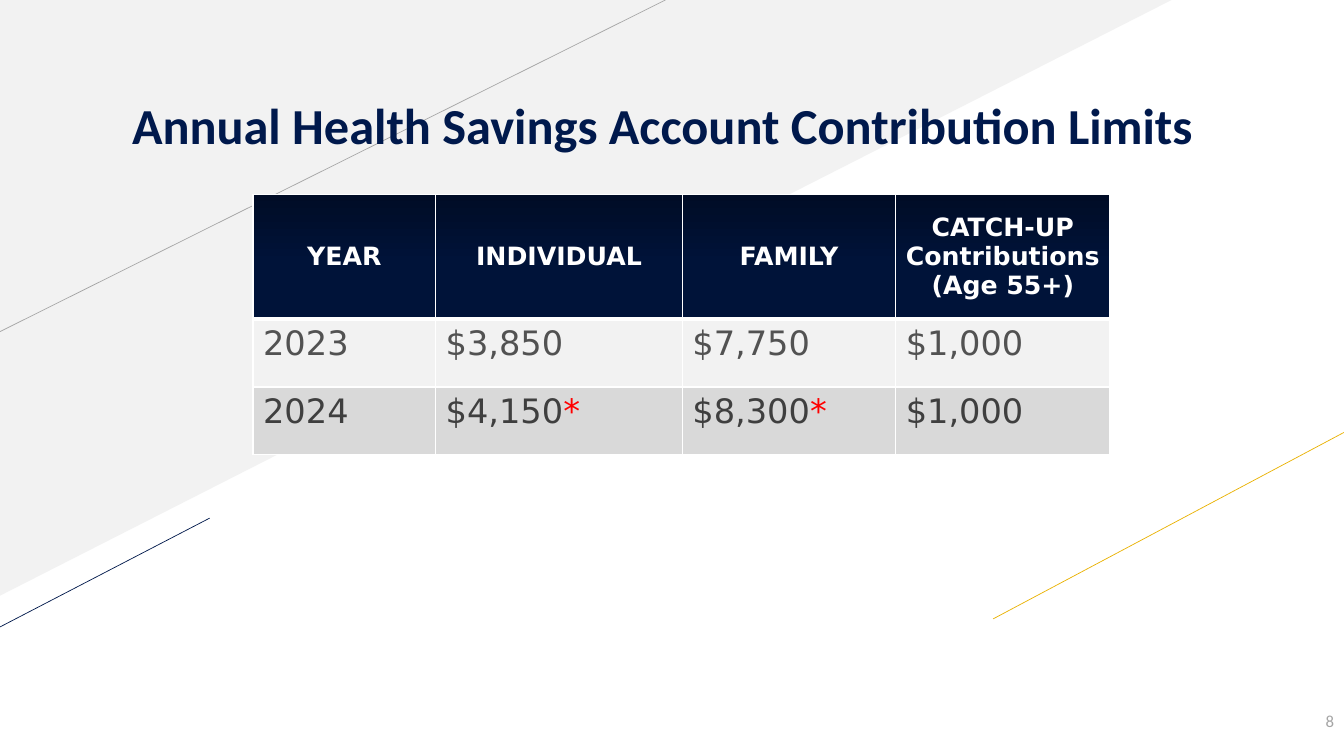
from dataclasses import dataclass

from lxml import etree
from pptx import Presentation
from pptx.dml.color import RGBColor
from pptx.enum import shapes, text
from pptx.oxml import ns
from pptx.util import Inches, Pt


@dataclass(frozen=True)
class Theme:
    heading_font: str = "Calibri"
    body_font: str = "DejaVu Sans"
    title_size: int = 36
    body_size: int = 24
    header_size: int = 18
    number_size: int = 12
    navy: str = "00194C"
    gold: str = "EAB200"
    white: str = "FFFFFF"
    red: str = "FF0000"
    pale: str = "F2F2F2"
    rule: str = "A6A6A6"
    number: str = "A5A5A5"
    header_top: str = "000C26"
    header_base: str = "001339"
    row_fills: tuple = ("F2F2F2", "D9D9D9")
    row_texts: tuple = ("525252", "3F3F3F")


THEME = Theme()
HEADERS = [["YEAR"], ["INDIVIDUAL"], ["FAMILY"], ["CATCH-UP Contributions", "(Age 55+)"]]
LIMITS = [
    ["2023", "$3,850", "$7,750", "$1,000"],
    ["2024", "$4,150*", "$8,300*", "$1,000"],
]


def rgb(value):
    return RGBColor.from_string(value)


def add_run(p, wording, size, color, font=THEME.body_font, bold=False):
    r = p.add_run()
    r.text = wording
    r.font.name = font
    r.font.size = Pt(size)
    r.font.bold = bold
    r.font.color.rgb = rgb(color)


def add_line(s, start, end, color):
    line = s.shapes.add_connector(
        shapes.MSO_CONNECTOR.STRAIGHT, *(Inches(v) for v in start + end))
    line.line.color.rgb = rgb(color)
    line.line.width = Pt(0.5)
    etree.SubElement(line._element.spPr, ns.qn("a:effectLst"))


def add_background(s, width, height):
    corner = s.shapes.add_shape(
        shapes.MSO_SHAPE.RIGHT_TRIANGLE, 0, 0, Inches(11.62), Inches(5.91))
    corner._element.spPr.xfrm.set("flipV", "1")
    corner.shadow.inherit = False
    corner.fill.solid()
    corner.fill.fore_color.rgb = rgb(THEME.pale)
    corner.line.fill.background()
    add_line(s, (0, 3.29), (6.6, 0), THEME.rule)
    add_line(s, (width - 3.48, height - 1.36), (width, height - 3.21), THEME.gold)
    add_line(s, (-0.02, height - 1.27), (2.08, height - 2.36), THEME.navy)


def add_page_number(s, left, top, width, height):
    box = s.shapes.add_textbox(*(Inches(v) for v in (left, top, width, height)))
    tf = box.text_frame
    tf.word_wrap = True
    tf.vertical_anchor = text.MSO_ANCHOR.MIDDLE
    p = tf.paragraphs[0]
    p.alignment = text.PP_ALIGN.RIGHT
    add_run(p, "8", THEME.number_size, THEME.number, THEME.heading_font)


def place_title(s, left, top, width, height):
    """Format the title and bring it in front of the background."""
    title = s.shapes.title
    title.left, title.top, title.width, title.height = (
        Inches(v) for v in (left, top, width, height))
    s.shapes._spTree.append(title._element)
    tf = title.text_frame
    tf.word_wrap = True
    tf.auto_size = text.MSO_AUTO_SIZE.NONE
    tf.vertical_anchor = text.MSO_ANCHOR.BOTTOM
    tf.margin_left = tf.margin_right = Inches(0.1)
    tf.margin_top, tf.margin_bottom = Inches(0.05), 0
    p = tf.paragraphs[0]
    p.alignment = text.PP_ALIGN.LEFT
    p.line_spacing = 0.9
    add_run(p, "Annual Health Savings Account Contribution Limits",
            THEME.title_size, THEME.navy, THEME.heading_font, True)


def set_borders(cell, top, bottom):
    """Draw white cell borders; top and bottom are widths in points."""
    tcPr = cell._tc.get_or_add_tcPr()
    for side, width in (("L", 1), ("R", 1), ("T", top), ("B", bottom)):
        ln = etree.SubElement(tcPr, ns.qn(f"a:ln{side}"), w=str(Pt(width)))
        fill = etree.SubElement(ln, ns.qn("a:solidFill"))
        etree.SubElement(fill, ns.qn("a:srgbClr"), val=THEME.white)


def fill_header_cell(cell, lines):
    set_borders(cell, 1, 3)
    cell.fill.gradient()
    cell.fill.gradient_angle = 270
    stops = zip(cell.fill.gradient_stops, (0, 0.55), (THEME.header_top, THEME.header_base))
    for stop, position, color in stops:
        stop.position = position
        stop.color.rgb = rgb(color)
    cell.vertical_anchor = text.MSO_ANCHOR.MIDDLE
    tf = cell.text_frame
    for i, line in enumerate(lines):
        p = tf.add_paragraph() if i else tf.paragraphs[0]
        p.alignment = text.PP_ALIGN.CENTER
        add_run(p, line, THEME.header_size, THEME.white, bold=True)


def fill_body_cell(cell, value, row):
    set_borders(cell, 1 if row else 3, 1)
    cell.fill.solid()
    cell.fill.fore_color.rgb = rgb(THEME.row_fills[row])
    p = cell.text_frame.paragraphs[0]
    amount, star, _ = value.partition("*")
    add_run(p, amount, THEME.body_size, THEME.row_texts[row])
    if star:
        add_run(p, star, THEME.body_size, THEME.red)


def add_limits_table(s, left, top, width, height):
    frame = s.shapes.add_table(
        len(LIMITS) + 1, len(HEADERS), *(Inches(v) for v in (left, top, width, height)))
    table = frame.table
    for column, share in zip(table.columns, (0.213, 0.288, 0.249, 0.25)):
        column.width = Inches(width * share)
    for row, share in zip(table.rows, (0.48, 0.26, 0.26)):
        row.height = Inches(height * share)
    for c, lines in enumerate(HEADERS):
        fill_header_cell(table.cell(0, c), lines)
    for r, values in enumerate(LIMITS):
        for c, value in enumerate(values):
            fill_body_cell(table.cell(r + 1, c), value, r)


def build_limits_slide(prs, width, height):
    s = prs.slides.add_slide(prs.slide_layouts[5])
    add_background(s, width, height)
    add_page_number(s, width - 0.81, height - 0.55, 0.81, 0.4)
    place_title(s, 1.21, 0.83, 11.72, 0.71)
    add_limits_table(s, 2.51, 1.93, 8.5, 2.58)


def main():
    width, height = 13.33, 7.5
    prs = Presentation()
    prs.slide_width, prs.slide_height = Inches(width), Inches(height)
    build_limits_slide(prs, width, height)
    prs.save("out.pptx")


if __name__ == "__main__":
    main()
